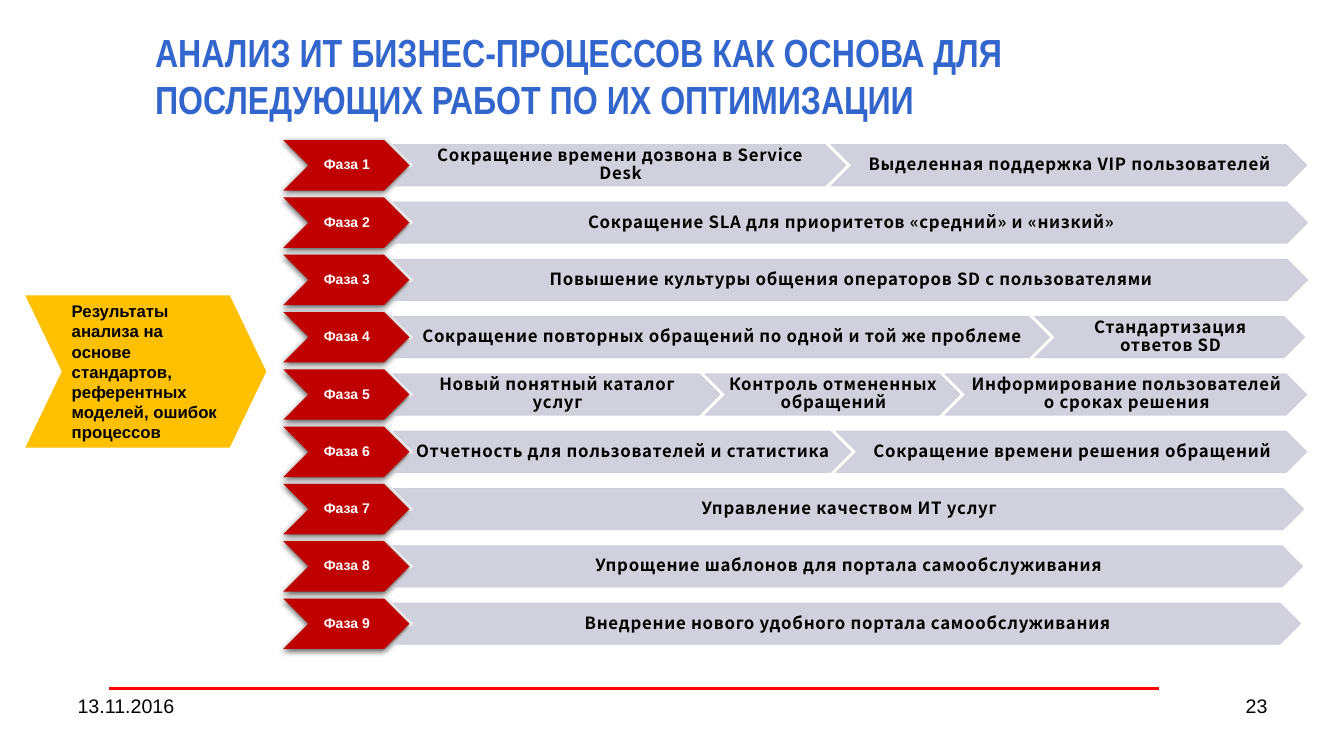
"""Build a slide of nine optimisation phases shown as rows of chevrons."""
from lxml.etree import SubElement
from pptx import Presentation
from pptx.dml.color import RGBColor
from pptx.enum.shapes import MSO_CONNECTOR as Connector, MSO_SHAPE as Preset
from pptx.enum.text import MSO_ANCHOR as Anchor, PP_ALIGN as Align
from pptx.oxml.ns import qn
from pptx.util import Inches, Pt

WIDTH, HEIGHT = Inches(13.33), Inches(7.5)
COLORS = {
    "title": "3366CC",
    "rule": "FF0000",
    "phase": "C00000",
    "step": "CDCDDA",
    "source": "FFC000",
    "dark": "000000",
    "light": "FFFFFF",
}
FIRST_TOP, ROW_PITCH = 18.53, 7.58
PHASE_LEFT, PHASE_WIDTH, PHASE_HEIGHT = 21.08, 9.38, 6.67
STEP_LEFT, STEP_HEIGHT, STEP_OVERLAP = 29.26, 5.47, 1.12
PHASES = [
    [("Сокращение времени дозвона в Service Desk", 33.68),
     ("Выделенная поддержка VIP пользователей", 35.41)],
    [("Сокращение SLA для приоритетов «средний» и «низкий»", 68.04)],
    [("Повышение культуры общения операторов SD с пользователями", 68.04)],
    [("Сокращение повторных обращений по одной и той же проблеме", 48.84),
     ("Стандартизация ответов SD", 20.1)],
    [("Новый понятный каталог услуг", 24.31),
     ("Контроль отмененных обращений", 18.98),
     ("Информирование пользователей о сроках решения", 26.93)],
    [("Отчетность для пользователей и статистика", 34.06),
     ("Сокращение времени решения обращений", 35.03)],
    [("Управление качеством ИТ услуг", 67.74)],
    [("Упрощение шаблонов для портала самообслуживания", 67.67)],
    [("Внедрение нового удобного портала самообслуживания", 67.52)],
]


def color(name):
    return RGBColor.from_string(COLORS[name])


def across(share):
    return round(WIDTH * share / 100)


def down(share):
    return round(HEIGHT * share / 100)


def area(left, top, width, height):
    return across(left), down(top), across(width), down(height)


def write(box, text, size, ink, font="Arial", bold=True, align=Align.LEFT):
    frame = box.text_frame
    frame.text = text
    frame.word_wrap = True
    para = frame.paragraphs[0]
    para.alignment = align
    span = para.runs[0]
    span.font.name = font
    span.font.size = Pt(size)
    span.font.bold = bold
    span.font.color.rgb = color(ink)
    return span


def add_text(page, place, text, size, ink, **style):
    write(page.shapes.add_textbox(*area(*place)), text, size, ink, **style)


def add_chevron(page, place, fill):
    chevron = page.shapes.add_shape(Preset.CHEVRON, *area(*place))
    chevron.shadow.inherit = False
    chevron.fill.solid()
    chevron.fill.fore_color.rgb = color(fill)
    chevron.line.fill.background()
    chevron.text_frame.vertical_anchor = Anchor.MIDDLE
    return chevron


def tighten(chevron, left_inset):
    frame = chevron.text_frame
    frame.margin_left, frame.margin_right = Inches(left_inset), 0
    frame.margin_top = frame.margin_bottom = Inches(0.01)
    frame.paragraphs[0].line_spacing = 0.9


def add_shadow(shape):
    effects = shape._element.spPr.find(qn("a:effectLst"))
    shadow = SubElement(effects, qn("a:outerShdw"), blurRad=str(Pt(4.5)),
                        dist=str(Pt(1.5)), dir="5400000", rotWithShape="0")
    shade = SubElement(shadow, qn("a:srgbClr"), val=COLORS["dark"])
    SubElement(shade, qn("a:alpha"), val="63000")


def add_phase(page, top, label):
    place = PHASE_LEFT, top, PHASE_WIDTH, PHASE_HEIGHT
    chevron = add_chevron(page, place, "phase")
    add_shadow(chevron)
    write(chevron, label, 10, "light", align=Align.CENTER)
    tighten(chevron, 0.01)


def add_step(page, left, top, width, text):
    chevron = add_chevron(page, (left, top, width, STEP_HEIGHT), "step")
    chevron.line.color.rgb = color("step")
    chevron.line.width = Pt(0.5)
    for shade in chevron._element.spPr.iter(qn("a:srgbClr")):
        SubElement(shade, qn("a:alpha"), val="90000")
    span = write(chevron, text, 12, "dark", font="Noto Sans CJK KR",
                 align=Align.CENTER)
    span.font._element.set("spc", "50")
    tighten(chevron, 0.02)


def add_phase_rows(page):
    for row, steps in enumerate(PHASES):
        top = FIRST_TOP + row * ROW_PITCH
        add_phase(page, top, f"Фаза {row + 1}")
        left = STEP_LEFT
        for text, width in steps:
            add_step(page, left, top + (PHASE_HEIGHT - STEP_HEIGHT) / 2, width, text)
            left += width - STEP_OVERLAP


def add_rule(page, left, right, level):
    rule = page.shapes.add_connector(Connector.STRAIGHT, across(left), down(level),
                                     across(right), down(level))
    rule.line.color.rgb = color("rule")
    rule.line.width = Pt(1.5)
    SubElement(rule._element.spPr, qn("a:effectLst"))


def add_source(page):
    chevron = add_chevron(page, (1.88, 39.07, 17.93, 20.13), "source")
    chevron.adjustments[0] = 0.24
    write(chevron, "Результаты анализа на основе стандартов, референтных моделей, "
          "ошибок процессов", 12, "dark")


def main():
    deck = Presentation()
    deck.slide_width, deck.slide_height = WIDTH, HEIGHT
    page = deck.slides.add_slide(deck.slide_layouts[6])
    add_text(page, (5.03, 91.07, 23.33, 6.93), "13.11.2016", 14, "dark", bold=False)
    add_text(page, (71.72, 91.07, 23.33, 6.93), "23", 14, "dark", bold=False,
             align=Align.RIGHT)
    add_text(page, (10.8, 3.07, 75.39, 12.53),
             "АНАЛИЗ ИТ БИЗНЕС-ПРОЦЕССОВ КАК ОСНОВА ДЛЯ ПОСЛЕДУЮЩИХ РАБОТ "
             "ПО ИХ ОПТИМИЗАЦИИ", 28, "title", font="Arial Narrow")
    add_rule(page, 8.1, 86.2, 91.07)
    add_phase_rows(page)
    add_source(page)
    deck.save("out.pptx")


if __name__ == "__main__":
    main()
